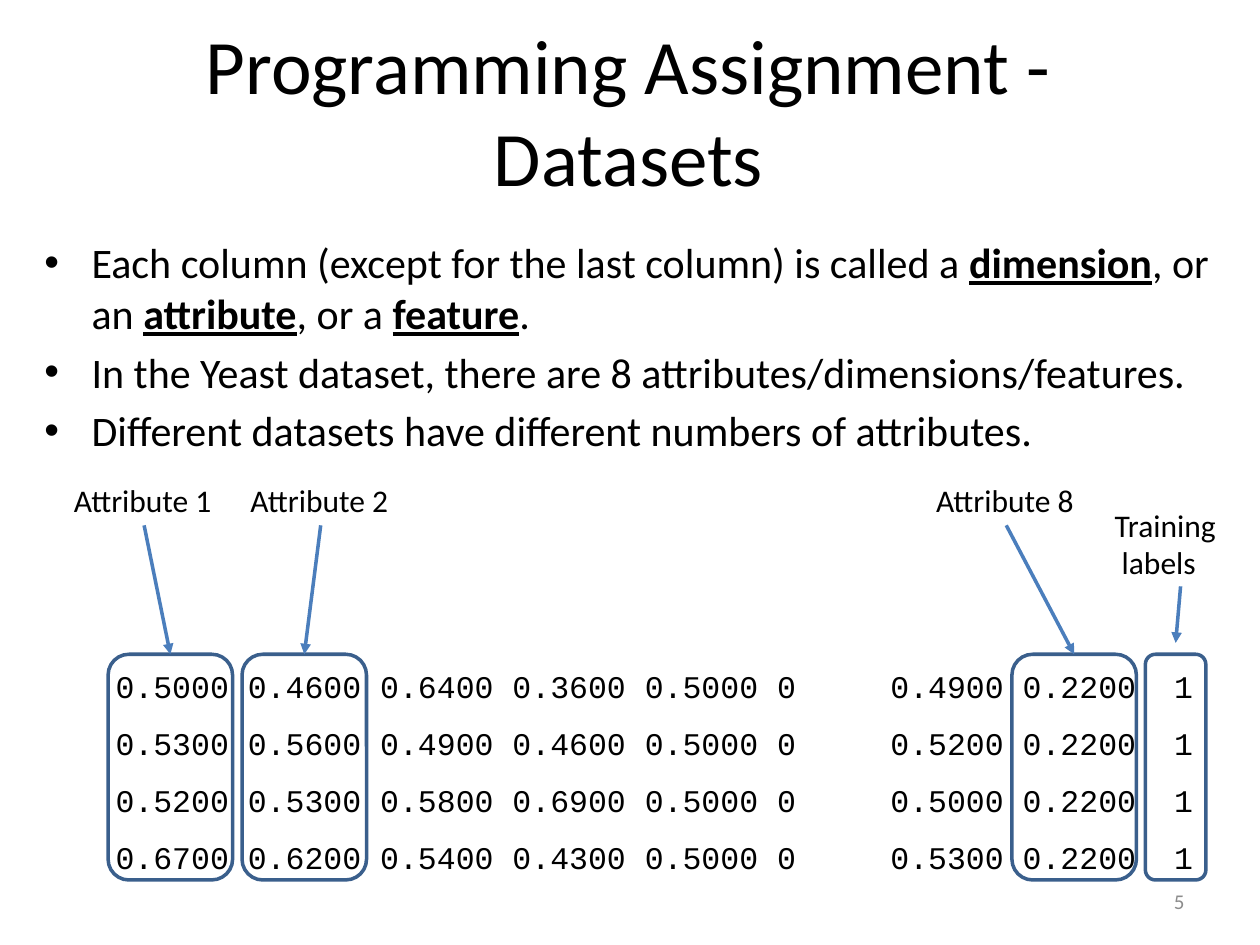
import pptx
import pptx.util
import pptx.dml.color
import pptx.enum.shapes
import pptx.enum.text
import pptx.oxml.ns
import lxml.etree

Cm = pptx.util.Cm
COLOURS = {"text": "000000", "number": "8C8C8C", "frame": "3A5F8C", "arrow": "4B7EBC"}
ROWS = [
    ("0.5000 0.4600 0.6400 0.3600 0.5000 0", "0.4900 0.2200", "1"),
    ("0.5300 0.5600 0.4900 0.4600 0.5000 0", "0.5200 0.2200", "1"),
    ("0.5200 0.5300 0.5800 0.6900 0.5000 0", "0.5000 0.2200", "1"),
    ("0.6700 0.6200 0.5400 0.4300 0.5000 0", "0.5300 0.2200", "1"),
]
BULLETS = [
    [("Each column (except for the last column) is called a ", False), ("dimension", True),
     (", or an ", False), ("attribute", True), (", or a ", False), ("feature", True), (".", False)],
    [("In the Yeast dataset, there are 8 attributes/dimensions/features.", False)],
    [("Different datasets have different numbers of attributes.", False)],
]


def colour(name):
    """Return the named colour."""
    return pptx.dml.color.RGBColor.from_string(COLOURS[name])


def place(shape, box):
    """Move and size a shape to a box given in centimetres."""
    shape.left, shape.top, shape.width, shape.height = (Cm(length) for length in box)


def add_run(paragraph, text, size, font="Calibri", shade="text", strong=False):
    """Add one formatted run; strong text is bold and underlined."""
    run = paragraph.add_run()
    run.text = text
    run.font.size = pptx.util.Pt(size)
    run.font.name = font
    run.font.color.rgb = colour(shade)
    if strong:
        run.font.bold = run.font.underline = True


def add_element(parent, tag, **attributes):
    """Append a drawing element with its attributes."""
    return lxml.etree.SubElement(parent, pptx.oxml.ns.qn(tag), attributes)


def add_title(slide, box):
    """Fill the title placeholder."""
    title = slide.shapes.title
    place(title, box)
    title.text_frame.auto_size = pptx.enum.text.MSO_AUTO_SIZE.NONE
    add_run(title.text_frame.paragraphs[0], "Programming Assignment - Datasets", 44)


def add_bullets(slide, box):
    """Fill the body placeholder with the bullet list."""
    body = slide.placeholders[1]
    place(body, box)
    frame = body.text_frame
    frame.auto_size = pptx.enum.text.MSO_AUTO_SIZE.NONE
    for index, pieces in enumerate(BULLETS):
        paragraph = frame.add_paragraph() if index else frame.paragraphs[0]
        for text, strong in pieces:
            add_run(paragraph, text, 24, strong=strong)


def add_data(slide, box):
    """Write the data rows, with tab stops at the wide gaps."""
    frame = slide.shapes.add_textbox(*(Cm(length) for length in box)).text_frame
    frame.word_wrap = True
    frame.margin_left = Cm(1.52)
    for index, row in enumerate(ROWS):
        paragraph = frame.add_paragraph() if index else frame.paragraphs[0]
        paragraph.line_spacing = 1.5
        add_run(paragraph, "\t".join(row), 18, "Courier New")
        tabs = add_element(paragraph._p.get_or_add_pPr(), "a:tabLst")
        for stop in (15.62, 21.34):
            add_element(tabs, "a:tab", pos=str(Cm(stop)), algn="l")


def add_label(slide, box, lines):
    """Add a column label, one line below another."""
    label = slide.shapes.add_textbox(*(Cm(length) for length in box))
    label.text_frame.word_wrap = False
    paragraph = label.text_frame.paragraphs[0]
    for index, line in enumerate(lines):
        if index:
            paragraph.add_line_break()
        add_run(paragraph, line, 18)
    return label


def add_frame(slide, box):
    """Outline one data column."""
    frame = slide.shapes.add_shape(
        pptx.enum.shapes.MSO_SHAPE.ROUNDED_RECTANGLE, *(Cm(length) for length in box))
    frame.shadow.inherit = False
    frame.fill.background()
    frame.line.color.rgb = colour("frame")
    frame.line.width = pptx.util.Pt(2)
    return frame


def add_arrow(slide, start, end):
    """Add an arrow between two points in centimetres."""
    arrow = slide.shapes.add_connector(
        pptx.enum.shapes.MSO_CONNECTOR.STRAIGHT, *(Cm(length) for length in start + end))
    arrow.line.color.rgb = colour("arrow")
    arrow.line.width = pptx.util.Pt(2)
    add_element(arrow.line._get_or_add_ln(), "a:tailEnd", type="triangle")
    add_element(arrow._element.spPr, "a:effectLst")
    return arrow


def add_columns(slide, box):
    """Frame the marked columns and point their labels at them."""
    left, top, width, height = box
    attributes = [("Attribute 1", 1.24, 2.18), ("Attribute 2", 4.8, 4.88), ("Attribute 8", 18.62, 20.4)]
    for text, label_left, frame_left in attributes:
        label = add_label(slide, (label_left, top - 3.62, 3.33, 1.02), [text])
        frame = add_frame(slide, (frame_left, top, 2.51, height))
        arrow = add_arrow(slide, (label_left, top), (frame_left, top))
        arrow.begin_connect(label, 2)
        arrow.end_connect(frame, 0)
    right = left + width
    add_label(slide, (right - 2.09, top - 3.12, 2.57, 1.8), ["Training", " labels"])
    add_frame(slide, (right - 1.22, top, 1.22, height))
    add_arrow(slide, (right - 0.51, top - 1.37), (right - 0.61, top - 0.23))


def add_slide_number(slide, box):
    """Write the slide number at the lower right."""
    frame = slide.shapes.add_textbox(*(Cm(length) for length in box)).text_frame
    frame.word_wrap = True
    frame.vertical_anchor = pptx.enum.text.MSO_ANCHOR.MIDDLE
    frame.paragraphs[0].alignment = pptx.enum.text.PP_ALIGN.RIGHT
    add_run(frame.paragraphs[0], "5", 12, shade="number")


def main():
    """Build and save the presentation."""
    presentation = pptx.Presentation()
    presentation.slide_width, presentation.slide_height = Cm(25.4), Cm(19.05)
    slide = presentation.slides.add_slide(presentation.slide_layouts[1])
    add_title(slide, (1.24, 0.84, 22.86, 2.74))
    add_bullets(slide, (0.64, 4.65, 24.33, 5.13))
    add_data(slide, (0.81, 12.95, 24.59, 4.78))
    add_columns(slide, (2.18, 13.19, 22.13, 4.55))
    add_slide_number(slide, (18.21, 17.65, 5.92, 1.02))
    presentation.save("out.pptx")


if __name__ == "__main__":
    main()
